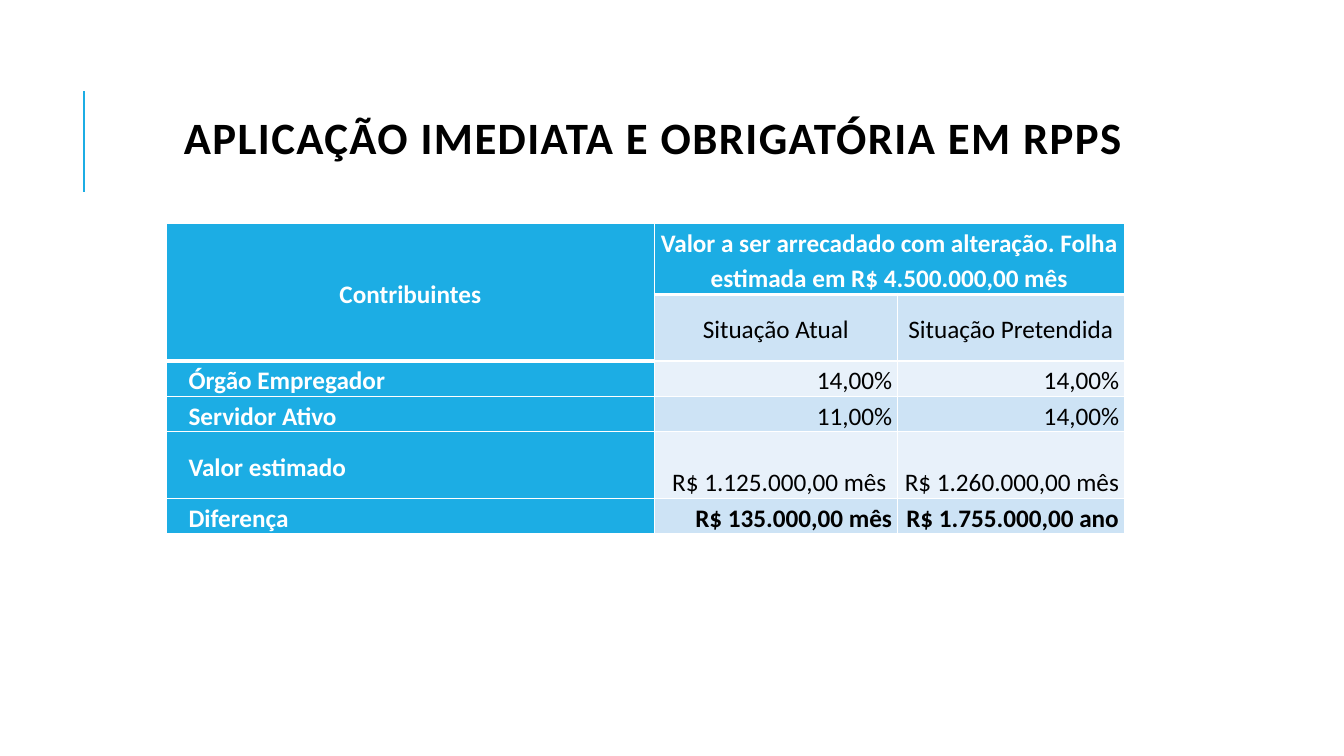
from dataclasses import dataclass

from lxml.etree import SubElement
from pptx import Presentation
from pptx.dml.color import RGBColor
from pptx.enum.shapes import MSO_CONNECTOR as Connector
from pptx.enum.text import MSO_ANCHOR as Anchor, MSO_AUTO_SIZE as AutoSize, PP_ALIGN as Align
from pptx.oxml.ns import qn
from pptx.util import Emu, Pt

PX = 9144  # EMU per px, 100 px to the inch
FONT = "Calibri"
BLACK = RGBColor(0x00, 0x00, 0x00)
WHITE = RGBColor(0xFF, 0xFF, 0xFF)
BLUE = RGBColor(0x1C, 0xAD, 0xE4)
BAND_DARK = RGBColor(0xCD, 0xE3, 0xF5)
BAND_LIGHT = RGBColor(0xE8, 0xF1, 0xFA)

COLUMN_WIDTHS = (484, 241, 225)
ROW_HEIGHTS = (66, 66, 32, 33, 66, 33)
THIN, THICK = 1, 3
THICK_BOTTOMS = {(0, 0), (1, 0), (0, 1), (0, 2)}


@dataclass(frozen=True)
class CellStyle:
    color: RGBColor
    bold: bool
    align: Align
    anchor: Anchor
    indent: int = 0


@dataclass(frozen=True)
class Contribution:
    label: str
    current: str
    intended: str
    bold: bool = False


HEADER = CellStyle(WHITE, True, Align.CENTER, Anchor.MIDDLE)
SUBHEADER = CellStyle(BLACK, False, Align.CENTER, Anchor.MIDDLE)
LABEL = CellStyle(WHITE, True, Align.LEFT, Anchor.MIDDLE, indent=17)
VALUE = CellStyle(BLACK, False, Align.RIGHT, Anchor.BOTTOM)
TOTAL = CellStyle(BLACK, True, Align.RIGHT, Anchor.BOTTOM)

CONTRIBUTIONS = (
    Contribution("Órgão Empregador", "14,00%", "14,00%"),
    Contribution("Servidor Ativo", "11,00%", "14,00%"),
    Contribution("Valor estimado", "R$ 1.125.000,00 mês ", "R$ 1.260.000,00 mês"),
    Contribution("Diferença", "R$ 135.000,00 mês", "R$ 1.755.000,00 ano", bold=True),
)


def px(length: int) -> Emu:
    return Emu(length * PX)


def add_span(para, text: str, size: int, color: RGBColor, bold: bool):
    span = para.add_run()
    span.text = text
    span.font.name = FONT
    span.font.size = Pt(size)
    span.font.bold = bold
    span.font.color.rgb = color
    return span


def set_borders(cell, row: int, column: int) -> None:
    properties = cell._tc.get_or_add_tcPr()
    widths = {
        "L": THIN,
        "R": THIN,
        "T": THICK if (row - 1, column) in THICK_BOTTOMS else THIN,
        "B": THICK if (row, column) in THICK_BOTTOMS else THIN,
    }
    for side, width in widths.items():
        line = SubElement(properties, qn(f"a:ln{side}"), w=str(Pt(width)))
        fill = SubElement(line, qn("a:solidFill"))
        SubElement(fill, qn("a:srgbClr"), val=str(WHITE))


def fill_cell(cell, text: str, style: CellStyle) -> None:
    cell.margin_left = cell.margin_right = px(5)
    cell.margin_top = cell.margin_bottom = 0
    cell.vertical_anchor = style.anchor
    para = cell.text_frame.paragraphs[0]
    para.alignment = style.align
    para.line_spacing = 1.15
    if style.indent:
        para._p.get_or_add_pPr().set("indent", str(px(style.indent)))
    add_span(para, text, 18, style.color, style.bold)


def add_title(page) -> None:
    title = page.shapes.title
    title.left, title.top, title.width, title.height = map(px, (98, 96, 1100, 89))
    frame = title.text_frame
    frame.word_wrap = True
    frame.auto_size = AutoSize.NONE
    frame.vertical_anchor = Anchor.MIDDLE
    para = frame.paragraphs[0]
    para.alignment = Align.CENTER
    para.line_spacing = 0.8
    span = add_span(para, "APLICAÇÃO IMEDIATA E OBRIGATÓRIA EM RPPS", 32, BLACK, True)
    span.font._element.set("spc", "100")


def add_accent_line(page) -> None:
    accent = page.shapes.add_connector(Connector.STRAIGHT, px(83), px(190), px(83), px(90))
    accent.line.color.rgb = BLUE
    accent.line.width = Pt(1.5)
    SubElement(accent._element.spPr, qn("a:effectLst"))


def add_contribution_table(page) -> None:
    table = page.shapes.add_table(
        len(ROW_HEIGHTS), len(COLUMN_WIDTHS), px(165), px(222),
        px(sum(COLUMN_WIDTHS)), px(sum(ROW_HEIGHTS)),
    ).table
    table.first_row = table.horz_banding = False
    for column, width in zip(table.columns, COLUMN_WIDTHS):
        column.width = px(width)
    for row, height in zip(table.rows, ROW_HEIGHTS):
        row.height = px(height)

    # Borders and fills
    for row in range(len(ROW_HEIGHTS)):
        for column in range(len(COLUMN_WIDTHS)):
            cell = table.cell(row, column)
            set_borders(cell, row, column)
            band = BAND_DARK if row % 2 else BAND_LIGHT
            cell.fill.solid()
            cell.fill.fore_color.rgb = BLUE if row == 0 or column == 0 else band

    # Header
    table.cell(0, 0).merge(table.cell(1, 0))
    table.cell(0, 1).merge(table.cell(0, 2))
    fill_cell(table.cell(0, 0), "Contribuintes", HEADER)
    fill_cell(
        table.cell(0, 1),
        "Valor a ser arrecadado com alteração. Folha estimada em R$ 4.500.000,00 mês",
        HEADER,
    )
    fill_cell(table.cell(1, 1), "Situação Atual", SUBHEADER)
    fill_cell(table.cell(1, 2), "Situação Pretendida", SUBHEADER)

    # Body
    for row, item in enumerate(CONTRIBUTIONS, start=2):
        value_style = TOTAL if item.bold else VALUE
        fill_cell(table.cell(row, 0), item.label, LABEL)
        fill_cell(table.cell(row, 1), item.current, value_style)
        fill_cell(table.cell(row, 2), item.intended, value_style)


def main() -> None:
    deck = Presentation()
    deck.slide_width, deck.slide_height = px(1333), px(750)
    page = deck.slides.add_slide(deck.slide_layouts.get_by_name("Title Only"))
    add_accent_line(page)
    add_title(page)
    add_contribution_table(page)
    deck.save("out.pptx")


if __name__ == "__main__":
    main()
